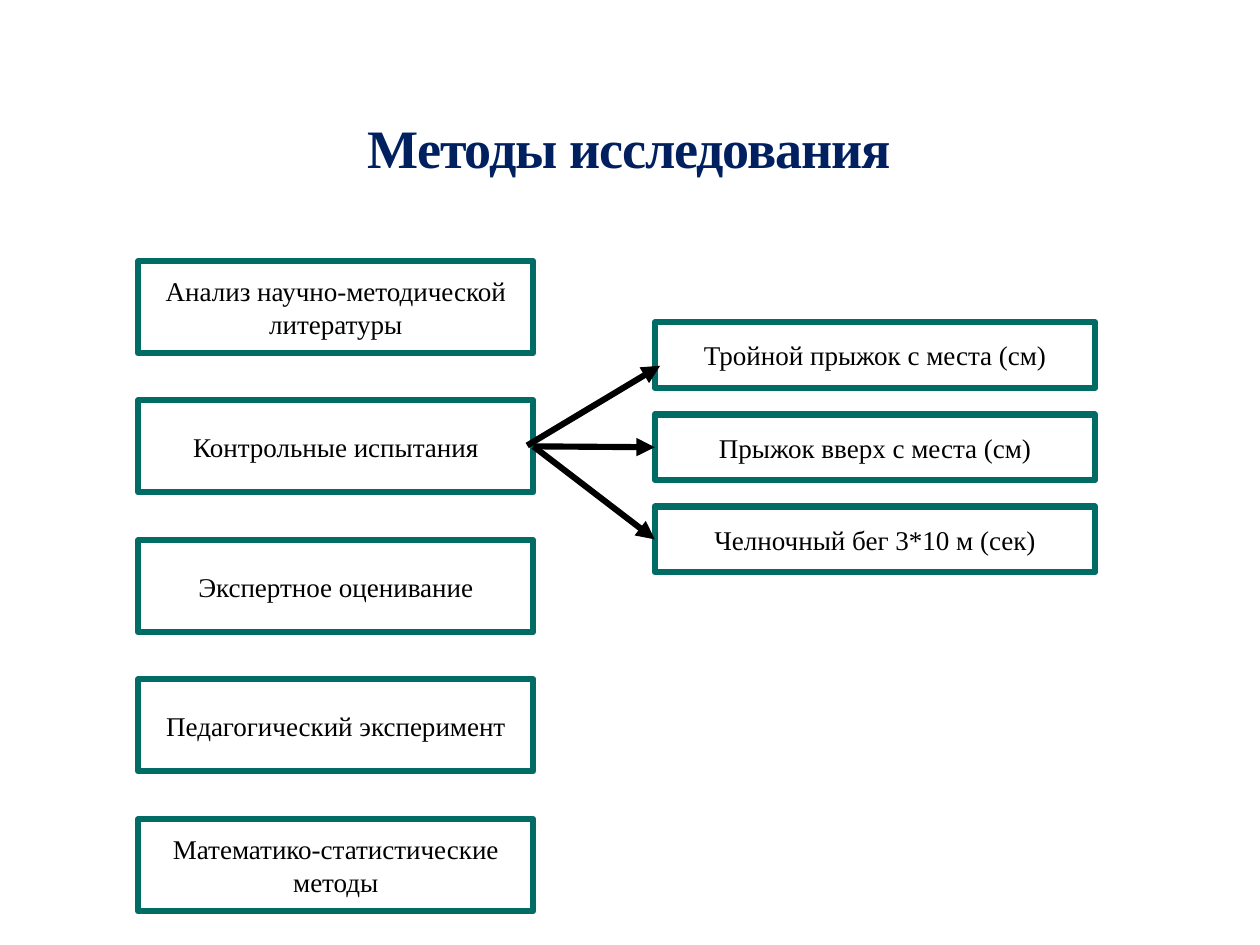
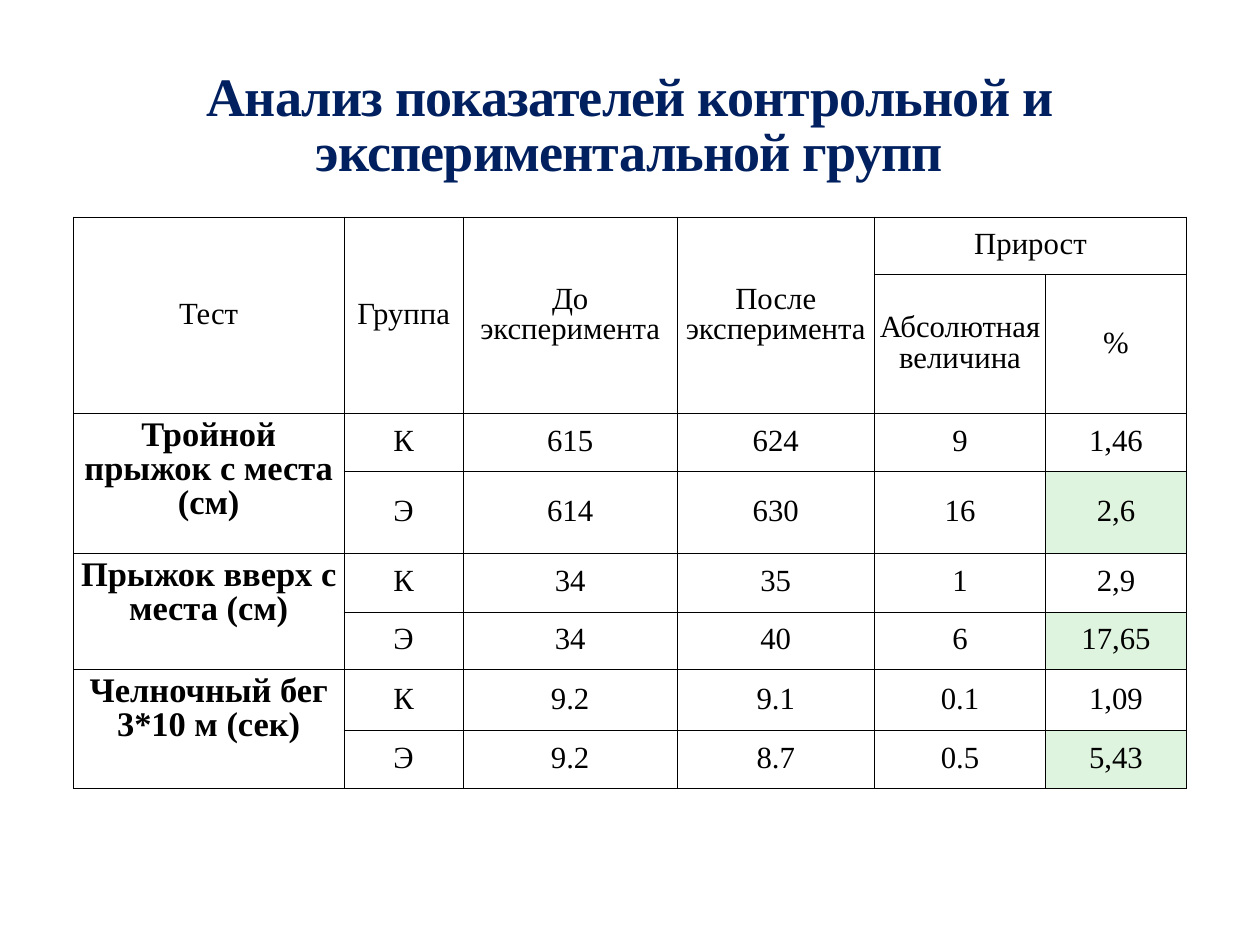
"""Build two slides on research methods and test results."""
from lxml import etree
from pptx import Presentation
from pptx.dml.color import RGBColor
from pptx.enum import shapes, text
from pptx.oxml import ns
from pptx.util import Emu, Pt

EMU_PER_PX = 9144
FONT = "Times New Roman"
NAVY = RGBColor(0x00, 0x20, 0x60)
TEAL = RGBColor(0x00, 0x6C, 0x65)
MINT = RGBColor(0xDF, 0xF4, 0xDE)
BLACK = RGBColor(0, 0, 0)
WHITE = RGBColor(0xFF, 0xFF, 0xFF)
INSET = 6
CELL_SIDE_INSET = 5

METHODS = [
    "Анализ научно-методической литературы",
    "Контрольные испытания",
    "Экспертное оценивание",
    "Педагогический эксперимент",
    "Математико-статистические методы",
]
TESTS = ["Тройной прыжок с места (см)", "Прыжок вверх с места (см)", "Челночный бег 3*10 м (сек)"]
HEADERS = [
    ["Тест", "Группа", "До эксперимента", "После эксперимента", "Прирост", ""],
    ["", "", "", "", "Абсолютная величина", "%"],
]
RESULTS = [
    ["К", "615", "624", "9", "1,46"],
    ["Э", "614", "630", "16", "2,6"],
    ["К", "34", "35", "1", "2,9"],
    ["Э", "34", "40", "6", "17,65"],
    ["К", "9.2", "9.1", "0.1", "1,09"],
    ["Э", "9.2", "8.7", "0.5", "5,43"],
]
COLUMN_WIDTHS = [305, 135, 241, 223, 193, 159]
ROW_HEIGHTS = [65, 157, 65, 93, 66, 65, 69, 65]


def px(length):
    """Turn px into EMU."""
    return Emu(length * EMU_PER_PX)


def write(frame, content, size, color=BLACK, bold=False, line_spacing=1.0, tracking=None):
    """Put one centred paragraph into a text frame."""
    paragraph = frame.paragraphs[0]
    paragraph.alignment = text.PP_ALIGN.CENTER
    paragraph.line_spacing = line_spacing
    run = paragraph.add_run()
    run.text = content
    run.font.name = FONT
    run.font.size = Pt(size)
    run.font.bold = bold
    run.font.color.rgb = color
    if tracking is not None:
        run.font._element.set("spc", str(round(tracking * 100)))


def set_insets(holder, side=INSET):
    """Set the inner margins of a text frame or a cell."""
    holder.margin_left = holder.margin_right = px(side)
    holder.margin_top = holder.margin_bottom = px(INSET)


def add_title(slide, content, top, height, tracking):
    """Add the slide title."""
    frame = slide.shapes.add_textbox(px(76), px(top), px(1269), px(height)).text_frame
    frame.word_wrap = True
    frame.vertical_anchor = text.MSO_ANCHOR.TOP
    set_insets(frame)
    write(frame, content, 44, color=NAVY, bold=True, line_spacing=0.85, tracking=tracking)


def add_box(slide, content, left, top, width, height):
    """Add a white box with a teal outline."""
    box = slide.shapes.add_shape(
        shapes.MSO_SHAPE.RECTANGLE, px(left), px(top), px(width), px(height))
    box.shadow.inherit = False
    box.fill.solid()
    box.fill.fore_color.rgb = WHITE
    box.line.color.rgb = TEAL
    box.line.width = Pt(5)
    frame = box.text_frame
    frame.word_wrap = True
    frame.vertical_anchor = text.MSO_ANCHOR.MIDDLE
    set_insets(frame)
    write(frame, content, 22)
    return box


def add_arrow(slide, start=(0, 0), end=(0, 0), source=None, target=None):
    """Add an arrow between points, or from a box's right side to a box's left side."""
    arrow = slide.shapes.add_connector(
        shapes.MSO_CONNECTOR.STRAIGHT, *(px(value) for value in (*start, *end)))
    if source is not None:
        arrow.begin_connect(source, 3)
    if target is not None:
        arrow.end_connect(target, 1)
    arrow.line.color.rgb = BLACK
    arrow.line.width = Pt(5)
    etree.SubElement(arrow.line._get_or_add_ln(), ns.qn("a:tailEnd"), type="triangle")
    etree.SubElement(arrow._element.spPr, ns.qn("a:effectLst"))


def add_borders(cell):
    """Draw thin black borders on all sides of a cell."""
    properties = cell._tc.get_or_add_tcPr()
    for side in ("lnL", "lnR", "lnT", "lnB"):
        border = etree.SubElement(properties, ns.qn(f"a:{side}"), w=str(Pt(0.5)))
        fill = etree.SubElement(border, ns.qn("a:solidFill"))
        etree.SubElement(fill, ns.qn("a:srgbClr"), val=str(BLACK))


def fill_cell(cell, content, highlighted=False, test_name=False):
    """Format a table cell and write its text."""
    add_borders(cell)
    cell.fill.solid()
    cell.fill.fore_color.rgb = MINT if highlighted else WHITE
    set_insets(cell, CELL_SIDE_INSET)
    cell.vertical_anchor = text.MSO_ANCHOR.TOP if test_name else text.MSO_ANCHOR.MIDDLE
    if content:
        write(cell.text_frame, content, 28 if test_name else 25, bold=test_name, line_spacing=0.9)


def add_results(slide):
    """Add the table of test results."""
    table = slide.shapes.add_table(
        len(ROW_HEIGHTS), len(COLUMN_WIDTHS), px(83), px(245),
        px(sum(COLUMN_WIDTHS)), px(sum(ROW_HEIGHTS))).table
    table.first_row = table.horz_banding = False
    for column, width in zip(table.columns, COLUMN_WIDTHS):
        column.width = px(width)
    for row, height in zip(table.rows, ROW_HEIGHTS):
        row.height = px(height)

    for column in range(4):
        table.cell(0, column).merge(table.cell(1, column))
    table.cell(0, 4).merge(table.cell(0, 5))
    for row in range(2, len(ROW_HEIGHTS), 2):
        table.cell(row, 0).merge(table.cell(row + 1, 0))

    names = [name for test in TESTS for name in (test, "")]
    body = [[name, *values] for name, values in zip(names, RESULTS)]
    for r, values in enumerate(HEADERS + body):
        for c, value in enumerate(values):
            fill_cell(table.cell(r, c), value,
                      highlighted=c == 5 and values[1] == "Э",
                      test_name=c == 0 and r >= len(HEADERS))


def build_methods(slide):
    """Build the slide of research methods."""
    add_title(slide, "Методы исследования", 134, 111, tracking=-0.9)
    methods = [add_box(slide, name, 156, 295 + 315 * i // 2, 446, 104)
               for i, name in enumerate(METHODS)]
    tests = [add_box(slide, name, 739, 364 + 104 * i, 497, 74)
             for i, name in enumerate(TESTS)]
    add_arrow(slide, start=(595, 503), end=(745, 413))
    for test in tests[1:]:
        add_arrow(slide, source=methods[1], target=test)


def build_analysis(slide):
    """Build the slide of group results."""
    add_title(slide, "Анализ показателей контрольной и экспериментальной групп",
              76, 169, tracking=-0.7)
    add_results(slide)


def main():
    """Build and save the presentation."""
    deck = Presentation()
    deck.slide_width, deck.slide_height = px(1422), px(1067)
    for build in (build_methods, build_analysis):
        build(deck.slides.add_slide(deck.slide_layouts[6]))
    deck.save("out.pptx")


if __name__ == "__main__":
    main()
